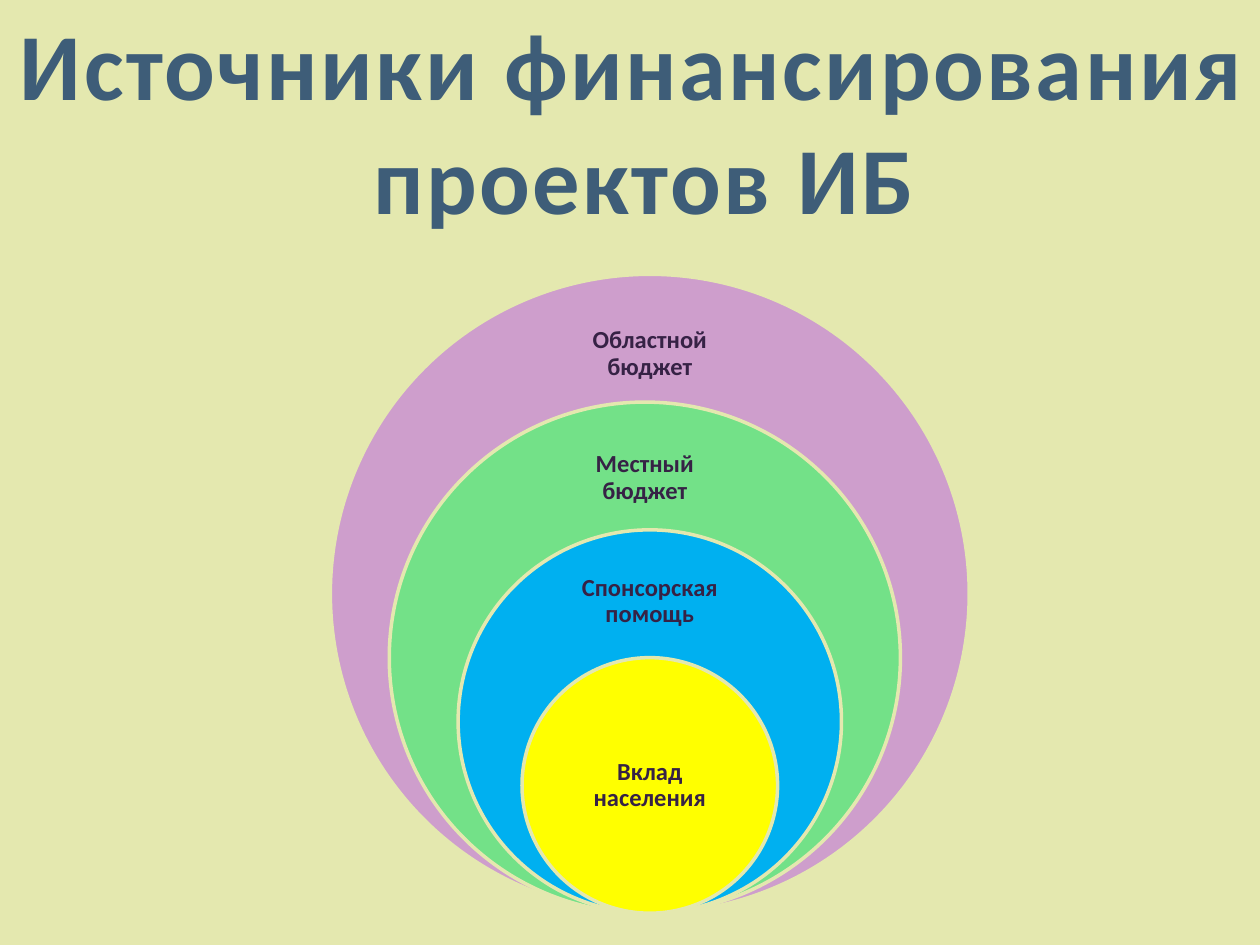
from dataclasses import dataclass

from pptx import Presentation
from pptx.dml.color import RGBColor
from pptx.enum.shapes import MSO_SHAPE
from pptx.enum.text import MSO_ANCHOR, MSO_AUTO_SIZE, PP_ALIGN
from pptx.util import Cm, Pt

OVAL = MSO_SHAPE.OVAL
CENTER = PP_ALIGN.CENTER
TOP, MIDDLE = MSO_ANCHOR.TOP, MSO_ANCHOR.MIDDLE
NO_AUTOFIT = MSO_AUTO_SIZE.NONE

FONT = "Calibri"
BACKGROUND = "E4E8AF"
TITLE_COLOR = "3E5D78"
LABEL_COLOR = "362245"

OUTER_DIAMETER = 12.88
RINGS_BOTTOM = 18.41
LABEL_WIDTH = 3.62
LABEL_INSET = Cm(0.28)


@dataclass
class Ring:
    text: str
    color: str
    scale: float
    center_x: float
    label_top: float
    label_height: float


RINGS = [
    Ring("Областной бюджет", "CE9ECC", 1.0, 13.1, 6.17, 1.93),
    Ring("Местный бюджет", "73E188", 0.8, 13.0, 8.71, 1.85),
    Ring("Спонсорская помощь", "00B0F0", 0.6, 13.1, 11.25, 1.75),
    Ring("Вклад населения", "FFFF00", 0.4, 13.1, 14.55, 2.57),
]


def rgb(color: str) -> RGBColor:
    return RGBColor.from_string(color)


def set_font(p, size: float, color: str) -> None:
    p.alignment = CENTER
    p.font.name = FONT
    p.font.size = Pt(size)
    p.font.bold = True
    p.font.color.rgb = rgb(color)


def add_title(s, lines: list[str]) -> None:
    sp = s.shapes.title
    sp.left, sp.top, sp.width, sp.height = Cm(0), Cm(0), Cm(25.96), Cm(4.88)
    tf = sp.text_frame
    tf.text = "\n".join(lines)
    tf.word_wrap = False
    tf.auto_size = MSO_AUTO_SIZE.SHAPE_TO_FIT_TEXT
    tf.vertical_anchor = TOP
    for p in tf.paragraphs:
        set_font(p, 54, TITLE_COLOR)
        for r in p.runs:
            r.font.name = FONT
            r._r.get_or_add_rPr().set("spc", "150")


def add_circle(s, ring: Ring) -> None:
    size = OUTER_DIAMETER * ring.scale
    sp = s.shapes.add_shape(
        OVAL, Cm(ring.center_x - size / 2), Cm(RINGS_BOTTOM - size), Cm(size), Cm(size)
    )
    sp.shadow.inherit = False
    sp.fill.solid()
    sp.fill.fore_color.rgb = rgb(ring.color)
    sp.line.color.rgb = rgb(BACKGROUND)
    sp.line.width = Pt(2)


def add_label(s, ring: Ring) -> None:
    sp = s.shapes.add_textbox(
        Cm(ring.center_x - LABEL_WIDTH / 2), Cm(ring.label_top),
        Cm(LABEL_WIDTH), Cm(ring.label_height),
    )
    tf = sp.text_frame
    tf.word_wrap = True
    tf.auto_size = NO_AUTOFIT
    tf.vertical_anchor = MIDDLE
    tf.margin_left = tf.margin_right = tf.margin_top = tf.margin_bottom = LABEL_INSET
    p = tf.paragraphs[0]
    p.text = ring.text
    p.line_spacing = 0.9
    set_font(p, 14, LABEL_COLOR)


def main() -> None:
    prs = Presentation()
    prs.slide_width, prs.slide_height = Cm(25.4), Cm(19.05)
    s = prs.slides.add_slide(prs.slide_layouts[5])
    s.background.fill.solid()
    s.background.fill.fore_color.rgb = rgb(BACKGROUND)
    for ring in RINGS:
        add_circle(s, ring)
        add_label(s, ring)
    add_title(s, ["Источники финансирования ", "проектов ИБ"])
    prs.save("out.pptx")


if __name__ == "__main__":
    main()
